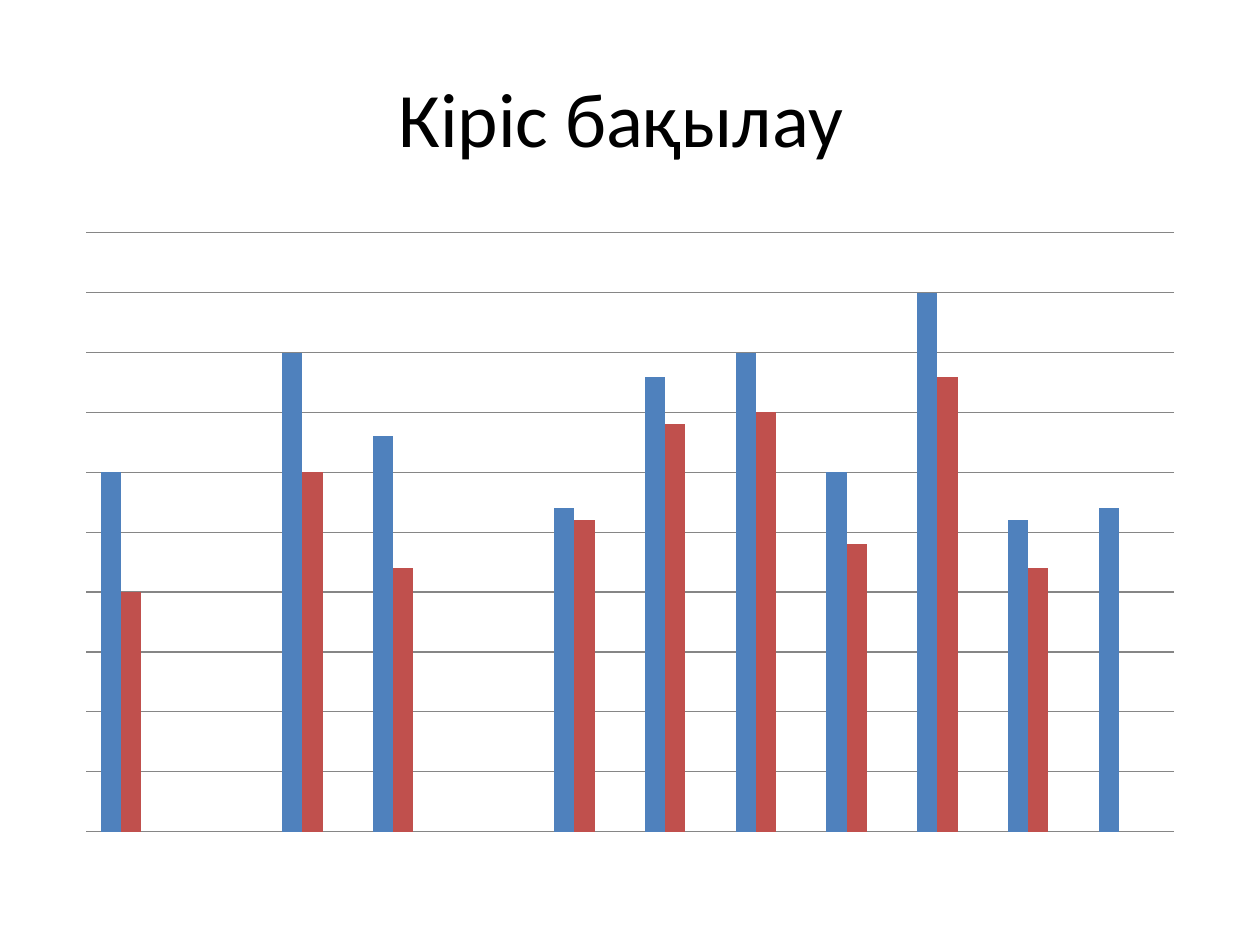
from lxml import etree
from pptx import Presentation
from pptx.chart.data import CategoryChartData
from pptx.dml.color import RGBColor
from pptx.enum.chart import XL_CHART_TYPE as ChartType
from pptx.enum.text import MSO_ANCHOR as Anchor, PP_ALIGN as Align
from pptx.oxml.ns import qn
from pptx.util import Pt

TITLE = "Кіріс бақылау "
FONT = "Calibri"
CATEGORIES = [str(number) for number in range(1, 13)]
SERIES = [
    ("Series 1", "4F81BD", [60, None, 80, 66, None, 54, 76, 80, 60, 90, 52, 54]),
    ("Series 2", "C0504D", [40, None, 60, 44, None, 52, 68, 70, 48, 76, 44, None]),
    ("Series 3", "9BBB59", [None] * 12),
]
PLOT_LAYOUT = {"x": 0.02, "y": 0.02, "w": 0.96, "h": 0.96}


def color(value):
    return RGBColor.from_string(value)


def set_plot_layout(chart):
    """Fix the inner plot area as fractions of the chart frame."""
    plot_area = chart._chartSpace.chart.plotArea
    for old in plot_area.findall(qn("c:layout")):
        plot_area.remove(old)
    layout = etree.Element(qn("c:layout"))
    manual = etree.SubElement(layout, qn("c:manualLayout"))
    settings = {"layoutTarget": "inner", "xMode": "edge", "yMode": "edge", **PLOT_LAYOUT}
    for name, value in settings.items():
        etree.SubElement(manual, qn(f"c:{name}")).set("val", str(value))
    plot_area.insert(0, layout)


deck = Presentation()
deck.slide_width, deck.slide_height = Pt(720), Pt(540)
page = deck.slides.add_slide(deck.slide_layouts[6])

# Title
box = page.shapes.add_textbox(Pt(36), Pt(21.6), Pt(648), Pt(90))
frame = box.text_frame
frame.word_wrap = True
frame.vertical_anchor = Anchor.MIDDLE
para = frame.paragraphs[0]
para.text = TITLE
para.alignment = Align.CENTER
para.font.name, para.font.size = FONT, Pt(44)
para.font.color.rgb = color("000000")

# Column chart
data = CategoryChartData()
data.categories = CATEGORIES
for name, _, values in SERIES:
    data.add_series(name, values)
chart = page.shapes.add_chart(
    ChartType.COLUMN_CLUSTERED, Pt(36), Pt(126), Pt(648), Pt(356.4), data
).chart
chart.has_legend = False
chart.has_title = False
chart.font.name, chart.font.size = FONT, Pt(18)
chart.font.color.rgb = color("000000")
set_plot_layout(chart)

plot = chart.plots[0]
plot.gap_width = 150
plot.vary_by_categories = False
for series, (_, fill, _) in zip(plot.series, SERIES):
    series.format.fill.solid()
    series.format.fill.fore_color.rgb = color(fill)

# Hidden axes, visible gridlines
chart.category_axis.visible = False
axis = chart.value_axis
axis.visible = False
axis.minimum_scale, axis.maximum_scale, axis.major_unit = 0, 100, 10
axis.has_major_gridlines = True
grid = axis.major_gridlines.format.line
grid.width = Pt(0.75)
grid.color.rgb = color("868686")

deck.save("out.pptx")
